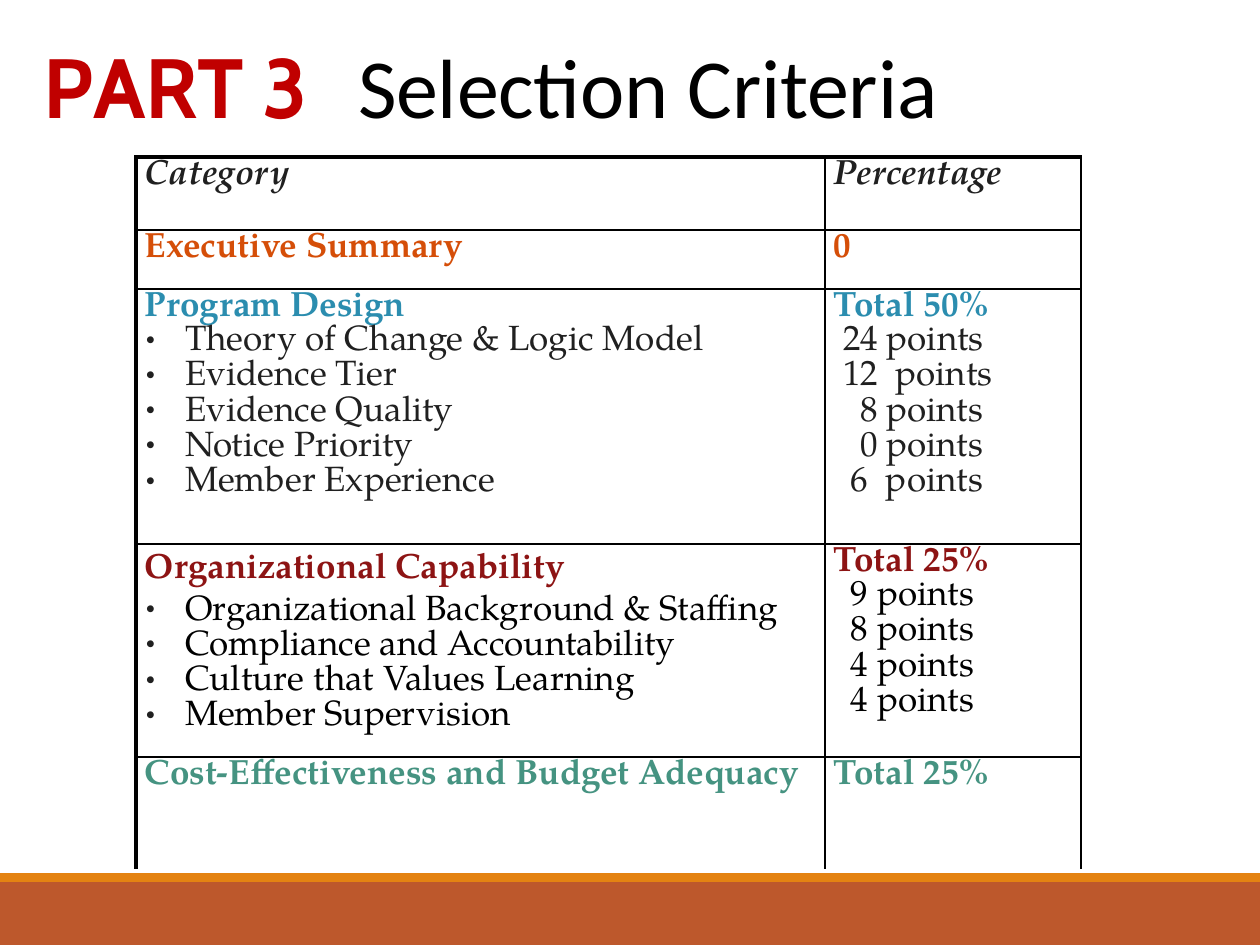
from lxml import etree
from pptx import Presentation
from pptx.dml.color import RGBColor
from pptx.enum.shapes import MSO_SHAPE
from pptx.enum.text import MSO_ANCHOR
from pptx.oxml.ns import qn
from pptx.util import Emu, Pt

RECTANGLE = MSO_SHAPE.RECTANGLE
BOTTOM = MSO_ANCHOR.BOTTOM
TOP = MSO_ANCHOR.TOP

BLACK = RGBColor(0x00, 0x00, 0x00)
CHARCOAL = RGBColor(0x20, 0x20, 0x20)
RED = RGBColor(0xC0, 0x00, 0x00)
ORANGE = RGBColor(0xD5, 0x4E, 0x08)
BLUE = RGBColor(0x2B, 0x8D, 0xAF)
MAROON = RGBColor(0x8D, 0x14, 0x14)
GREEN = RGBColor(0x45, 0x93, 0x81)
RUST = RGBColor(0xBD, 0x58, 0x2C)
AMBER = RGBColor(0xE4, 0x83, 0x12)

SLIDE_SIZE = (1260, 945)
TITLE_BOX = (42, 32, 975, 103)
TITLE_TAB = 380
TITLE_RUNS = [
    ("P", "Cabin", RED, True, -320),
    ("ART 3\t", "Cabin", RED, True, -10),
    ("Selection Criteria", "Calibri", BLACK, False, -10),
]
BARS = [((0, 882, 1260, 63), RUST), ((0, 873, 1260, 9), AMBER)]

TABLE_FONT = "TeX Gyre Pagella"
TABLE_ORIGIN = (136, 157)
COLUMN_WIDTHS = [689, 256]
TEXT_INDENT = 9
BULLET_INDENT = 49
BULLET_HANG = 39
THIN, THICK = 1, 2.25

SECTIONS = [
    {"height": 73, "heads": ("Category", "Percentage"), "color": CHARCOAL, "italic": True},
    {"height": 59, "heads": ("Executive Summary", "0"), "color": ORANGE},
    {
        "height": 255, "heads": ("Program Design", "Total 50%"), "color": BLUE,
        "items": [
            ("Theory of Change & Logic Model", "24 points", 18),
            ("Evidence Tier", "12  points", 18),
            ("Evidence Quality", "8 points", 35),
            ("Notice Priority", "0 points", 35),
            ("Member Experience", "6  points", 26),
        ],
        "item_color": CHARCOAL,
    },
    {
        "height": 213, "heads": ("Organizational Capability", "Total 25%"), "color": MAROON,
        "items": [
            ("Organizational Background & Staffing", "9 points", 26),
            ("Compliance and Accountability", "8 points", 26),
            ("Culture that Values Learning", "4 points", 26),
            ("Member Supervision", "4 points", 26),
        ],
        "item_color": BLACK, "loose_lines": 2,
    },
    {"height": 112, "heads": ("Cost-Effectiveness and Budget Adequacy", "Total 25%"), "color": GREEN},
]


def px(length):
    return Emu(round(length * 914400 / 126))


def add_run(para, text, font, size, color, bold=False, italic=False):
    span = para.add_run()
    span.text = text
    span.font.name = font
    span.font.size = Pt(size)
    span.font.bold = bold
    span.font.italic = italic
    span.font.color.rgb = color
    return span


def indent(para, left, hang=0):
    properties = para._p.get_or_add_pPr()
    properties.set("marL", str(px(left)))
    properties.set("indent", str(-px(hang)))
    return properties


def add_bullet(para, color):
    properties = indent(para, BULLET_INDENT, BULLET_HANG)
    bullet_color = etree.SubElement(properties, qn("a:buClr"))
    etree.SubElement(bullet_color, qn("a:srgbClr"), val=str(color))
    etree.SubElement(properties, qn("a:buSzPct"), val="75000")
    etree.SubElement(properties, qn("a:buChar"), char="•")


def set_borders(cell, widths):
    properties = cell._tc.get_or_add_tcPr()
    for place, (side, width) in enumerate(zip("LRTB", widths)):
        line = etree.Element(qn(f"a:ln{side}"), w=str(Pt(width)))
        if width:
            fill = etree.SubElement(line, qn("a:solidFill"))
            etree.SubElement(fill, qn("a:srgbClr"), val=str(BLACK))
        else:
            etree.SubElement(line, qn("a:noFill"))
        properties.insert(place, line)


def add_bars(page):
    for bounds, color in BARS:
        bar = page.shapes.add_shape(RECTANGLE, *map(px, bounds))
        bar.shadow.inherit = False
        bar.fill.solid()
        bar.fill.fore_color.rgb = color
        bar.line.fill.background()


def add_title(page):
    frame = page.shapes.add_textbox(*map(px, TITLE_BOX)).text_frame
    frame.word_wrap = True
    frame.vertical_anchor = BOTTOM
    frame.margin_left = frame.margin_right = frame.margin_bottom = 0
    frame.margin_top = px(1)
    para = frame.paragraphs[0]
    properties = indent(para, 1)
    tabs = etree.SubElement(properties, qn("a:tabLst"))
    etree.SubElement(tabs, qn("a:tab"), pos=str(px(TITLE_TAB)), algn="l")
    for text, font, color, bold, spacing in TITLE_RUNS:
        span = add_run(para, text, font, 48, color, bold)
        span.font._element.set("spc", str(spacing))


def fill_cell(cell, section, column):
    cell.fill.background()
    cell.vertical_anchor = TOP
    cell.margin_left = cell.margin_right = cell.margin_bottom = 0
    cell.margin_top = px(2)
    frame = cell.text_frame
    head = frame.paragraphs[0]
    indent(head, TEXT_INDENT)
    head.space_before = Pt(1.3)
    add_run(head, section["heads"][column], TABLE_FONT, 20, section["color"],
            True, section.get("italic", False))
    for item in section.get("items", []):
        para = frame.add_paragraph()
        if column == 0:
            add_bullet(para, CHARCOAL)
        else:
            indent(para, item[2])
        add_run(para, item[column], TABLE_FONT, 20, section["item_color"])
    if column == 0:
        for para in frame.paragraphs[:section.get("loose_lines", 0)]:
            para.line_spacing = Pt(24)


def add_criteria(page):
    heights = [section["height"] for section in SECTIONS]
    size = (sum(COLUMN_WIDTHS), sum(heights))
    table = page.shapes.add_table(
        len(heights), len(COLUMN_WIDTHS), *map(px, TABLE_ORIGIN + size)).table
    table.first_row = False
    table.horz_banding = False
    for column, width in zip(table.columns, COLUMN_WIDTHS):
        column.width = px(width)
    last = len(SECTIONS) - 1
    for row, section in enumerate(SECTIONS):
        table.rows[row].height = px(section["height"])
        for column in range(len(COLUMN_WIDTHS)):
            cell = table.cell(row, column)
            fill_cell(cell, section, column)
            set_borders(cell, (
                THICK if column == 0 else THIN,
                THIN,
                THICK if row == 0 else THIN,
                0 if row == last else THIN,
            ))


def main():
    deck = Presentation()
    deck.slide_width, deck.slide_height = map(px, SLIDE_SIZE)
    page = deck.slides.add_slide(deck.slide_layouts[6])
    add_bars(page)
    add_title(page)
    add_criteria(page)
    deck.save("out.pptx")


if __name__ == "__main__":
    main()
